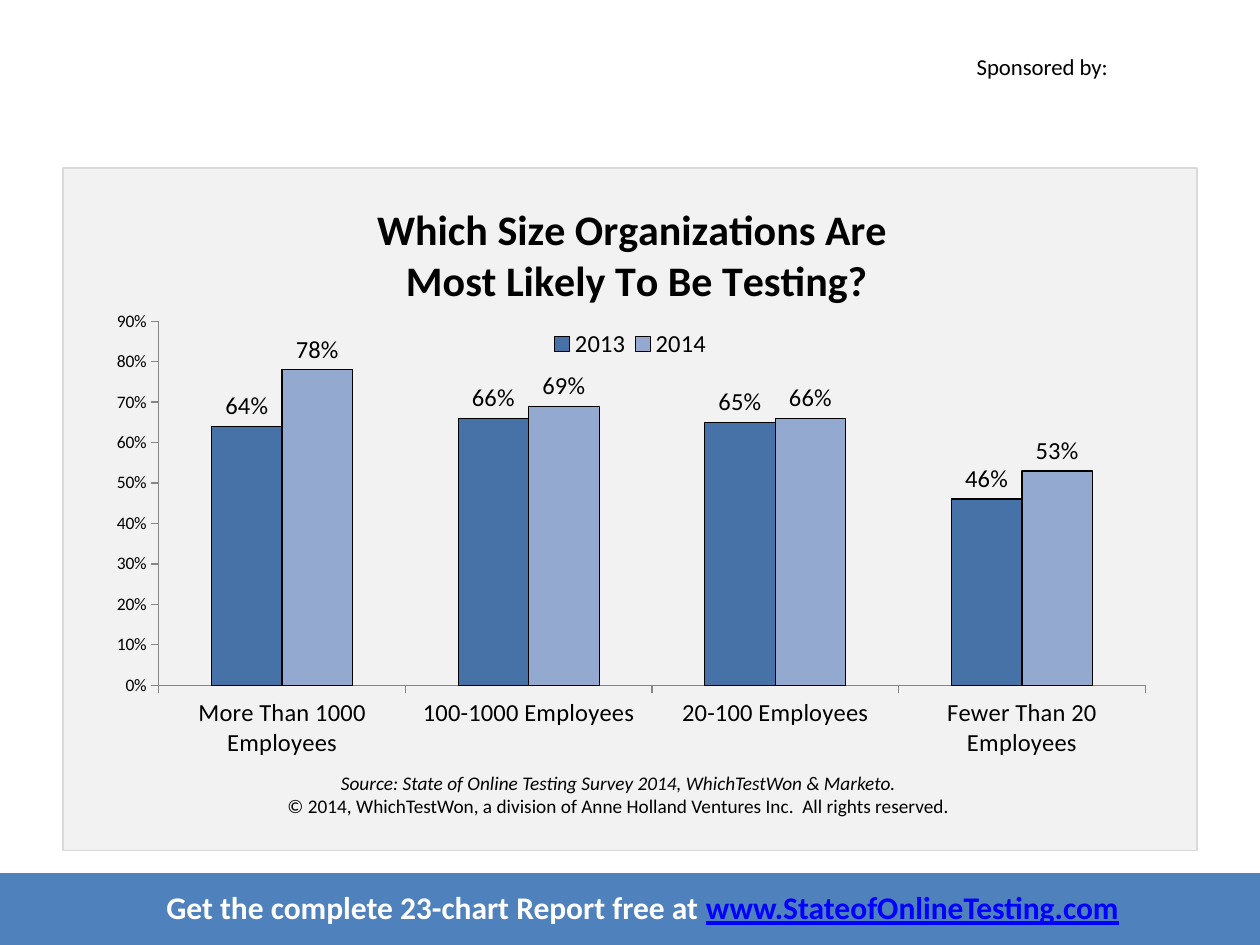
"""Build the slide on testing by organization size, with a clustered column chart."""
import pptx
import pptx.chart.data
import pptx.dml.color
import pptx.enum.chart
import pptx.enum.shapes
import pptx.enum.text
import pptx.oxml
import pptx.oxml.ns
import pptx.util

Pt = pptx.util.Pt
RGB = pptx.dml.color.RGBColor.from_string
XL = pptx.enum.chart
CENTER = pptx.enum.text.PP_ALIGN.CENTER
LEFT = pptx.enum.text.PP_ALIGN.LEFT
FONT = "Calibri"
COLORS = {
    "panel": "F2F2F2", "panel_line": "D9D9D9", "band": "4F81BD",
    "text": "000000", "white": "FFFFFF", "link": "0000FF",
    "2013": "4672A8", "2014": "93A9CF", "axis": "868686",
}


def add_text(s, box, paragraphs, size, align=CENTER):
    """Add a text box; each run is (text, colour, bold, italic, underline)."""
    tf = s.shapes.add_textbox(*map(Pt, box)).text_frame
    tf.word_wrap = True
    for i, runs in enumerate(paragraphs):
        p = tf.paragraphs[0] if i == 0 else tf.add_paragraph()
        p.alignment = align
        p.font.size, p.font.name = Pt(size), FONT
        for text, color, bold, italic, underline in runs:
            r = p.add_run()
            r.text = text
            r.font.color.rgb = RGB(COLORS[color])
            r.font.bold, r.font.italic, r.font.underline = bold, italic, underline


def set_layout(parent, index, inner=False, **place):
    """Give a chart part a manual layout in fractions of the chart."""
    qn = pptx.oxml.ns.qn
    for old in parent.findall(qn("c:layout")):
        parent.remove(old)
    parts = '<c:layoutTarget val="inner"/>' if inner else ""
    parts += "".join(f'<c:{k}Mode val="edge"/>' for k in "xy")
    parts += "".join(f'<c:{k} val="{v}"/>' for k, v in place.items())
    ns = pptx.oxml.ns.nsdecls("c")
    parent.insert(index, pptx.oxml.parse_xml(
        f"<c:layout {ns}><c:manualLayout>{parts}</c:manualLayout></c:layout>"))


prs = pptx.Presentation()
prs.slide_width, prs.slide_height = Pt(720), Pt(540)
s = prs.slides.add_slide(prs.slide_layouts[6])

for box, fill, line in [((36, 96, 648, 390), "panel", "panel_line"),
                        ((0, 499, 720, 41), "band", None)]:
    sp = s.shapes.add_shape(pptx.enum.shapes.MSO_SHAPE.RECTANGLE, *map(Pt, box))
    sp.shadow.inherit = False
    sp.fill.solid()
    sp.fill.fore_color.rgb = RGB(COLORS[fill])
    if line:
        sp.line.color.rgb = RGB(COLORS[line])
        sp.line.width = Pt(1)
    else:
        sp.line.fill.background()

add_text(s, (551, 26.6, 111.6, 23), [[("Sponsored by:", "text", False, False, False)]], 13, LEFT)
add_text(s, (48.2, 504, 642.2, 29), [[
    ("Get the complete 23-chart Report free at ", "white", True, False, False),
    ("www.StateofOnlineTesting.com", "link", True, False, True),
    (" ", "white", True, False, False),
]], 18)

data = pptx.chart.data.CategoryChartData(number_format="0%")
data.categories = ["More Than 1000 Employees", "100-1000 Employees",
                   "20-100 Employees", "Fewer Than 20 Employees"]
data.add_series("2013", (0.64, 0.66, 0.65, 0.46))
data.add_series("2014", (0.78, 0.69, 0.66, 0.53))
chart = s.shapes.add_chart(XL.XL_CHART_TYPE.COLUMN_CLUSTERED,
                           Pt(54), Pt(96), Pt(612.7), Pt(365), data).chart
chart.font.size, chart.font.name = Pt(10), FONT
chart.font.color.rgb = RGB(COLORS["text"])

tf = chart.chart_title.text_frame
tf.text = "Which Size Organizations Are \nMost Likely To Be Testing?"
for p in tf.paragraphs:
    p.font.size, p.font.bold, p.font.name = Pt(24), True, FONT
    p.font.color.rgb = RGB(COLORS["text"])
chart.chart_title.include_in_layout = False
set_layout(chart.chart_title._element, 1, x=0.26, y=0.05)

chart.has_legend = True
chart.legend.position = XL.XL_LEGEND_POSITION.TOP
chart.legend.include_in_layout = False
chart.legend.font.size = Pt(14)
set_layout(chart.legend._element, 1, x=0.42, y=0.25, w=0.16, h=0.05)
set_layout(chart._chartSpace.chart.plotArea, 0, True, x=0.06, y=0.24, w=0.92, h=0.57)

plot = chart.plots[0]
plot.gap_width, plot.overlap, plot.vary_by_categories = 150, 0, False
for series in plot.series:
    series.format.fill.solid()
    series.format.fill.fore_color.rgb = RGB(COLORS[series.name])
    series.format.line.color.rgb = RGB(COLORS["text"])
    series.format.line.width = Pt(0.75)
    labels = series.data_labels
    labels.show_value = True
    labels.position = XL.XL_LABEL_POSITION.OUTSIDE_END
    labels.number_format, labels.number_format_is_linked = "0%", False
    labels.font.size = Pt(14)

for axis, size in [(chart.category_axis, 14), (chart.value_axis, 10)]:
    axis.has_major_gridlines = False
    axis.major_tick_mark = XL.XL_TICK_MARK.OUTSIDE
    axis.minor_tick_mark = XL.XL_TICK_MARK.NONE
    axis.tick_labels.font.size = Pt(size)
    axis.format.line.color.rgb = RGB(COLORS["axis"])
    axis.format.line.width = Pt(0.75)
axis = chart.value_axis
axis.minimum_scale, axis.maximum_scale, axis.major_unit = 0, 0.9, 0.1
axis.tick_labels.number_format = "0%"
axis.tick_labels.number_format_is_linked = False

add_text(s, (48.2, 437, 610.6, 31), [
    [("Source: State of Online Testing Survey 2014, WhichTestWon & Marketo.",
      "text", False, True, False)],
    [("© 2014, WhichTestWon, a division of Anne Holland Ventures Inc.  All rights reserved.",
      "text", False, False, False)],
], 11)

prs.save("out.pptx")
